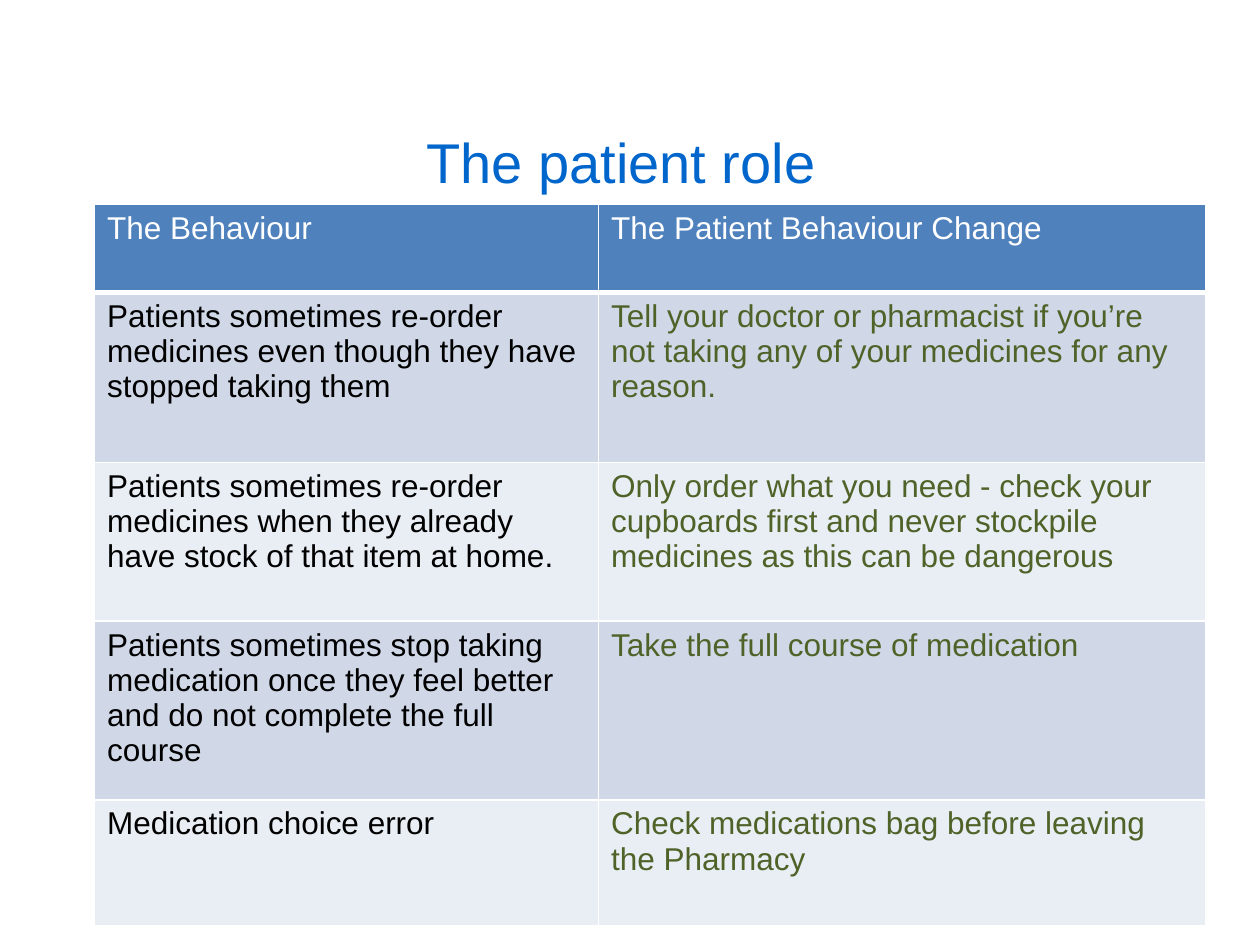
"""Build the patient role slide with its behaviour table."""
import lxml.etree
import pptx
import pptx.dml.color
import pptx.enum.text
import pptx.oxml.ns
import pptx.util
from pptx.util import Inches

TITLE = "The patient role"
ROWS = [
    ("The Behaviour", "The Patient Behaviour Change"),
    ("Patients sometimes re-order medicines even though they have stopped taking them",
     "Tell your doctor or pharmacist if you’re not taking any of your medicines for any reason."),
    ("Patients sometimes re-order medicines when they already have stock of that item at home.",
     "Only order what you need - check your cupboards first and never stockpile medicines as this can be dangerous"),
    ("Patients sometimes stop taking medication once they feel better and do not complete the full course",
     "Take the full course of medication"),
    ("Medication choice error", "Check medications bag before leaving the Pharmacy"),
]
COLUMN_WIDTHS = [4, 4.82]
ROW_HEIGHTS = [0.7, 1.35, 1.26, 1.42, 1]
COLORS = {
    "title": "0066CC", "header": "4F81BD", "odd": "D0D8E8", "even": "E9EDF4",
    "white": "FFFFFF", "behaviour": "000000", "change": "4F6228",
}


def rgb(name):
    return pptx.dml.color.RGBColor.from_string(COLORS[name])


def write_text(text_frame, text, size=18, color="behaviour", align=pptx.enum.text.PP_ALIGN.LEFT):
    paragraph = text_frame.paragraphs[0]
    paragraph.alignment = align
    run = paragraph.add_run()
    run.text = text
    run.font.name = "Arial"
    run.font.size = pptx.util.Pt(size)
    run.font.bold = False
    run.font.color.rgb = rgb(color)


def set_borders(cell, bottom_width):
    properties = cell._tc.get_or_add_tcPr()
    widths = {"lnL": 1, "lnR": 1, "lnT": 1, "lnB": bottom_width}
    for position, (side, width) in enumerate(widths.items()):
        line = lxml.etree.Element(pptx.oxml.ns.qn(f"a:{side}"), w=str(pptx.util.Pt(width)))
        fill = lxml.etree.SubElement(line, pptx.oxml.ns.qn("a:solidFill"))
        lxml.etree.SubElement(fill, pptx.oxml.ns.qn("a:srgbClr"), val=COLORS["white"])
        properties.insert(position, line)


def add_title(slide):
    title = slide.shapes.title
    title.left, title.top, title.width, title.height = map(Inches, (0.43, 0.84, 9, 0.87))
    title.text_frame.vertical_anchor = pptx.enum.text.MSO_ANCHOR.MIDDLE
    write_text(title.text_frame, TITLE, size=32, color="title",
               align=pptx.enum.text.PP_ALIGN.CENTER)


def add_behaviour_table(slide):
    table = slide.shapes.add_table(
        len(ROWS), len(COLUMN_WIDTHS), Inches(0.75), Inches(1.62),
        Inches(sum(COLUMN_WIDTHS)), Inches(sum(ROW_HEIGHTS))).table
    for column, width in zip(table.columns, COLUMN_WIDTHS):
        column.width = Inches(width)
    for index, (row, height, texts) in enumerate(zip(table.rows, ROW_HEIGHTS, ROWS)):
        row.height = Inches(height)
        is_header = index == 0
        fill = "header" if is_header else ("odd" if index % 2 else "even")
        for cell, text, color in zip(row.cells, texts, ("behaviour", "change")):
            cell.fill.solid()
            cell.fill.fore_color.rgb = rgb(fill)
            set_borders(cell, 3 if is_header else 1)
            write_text(cell.text_frame, text, color="white" if is_header else color)


def main():
    presentation = pptx.Presentation()
    presentation.slide_width, presentation.slide_height = Inches(10), Inches(7.5)
    slide = presentation.slides.add_slide(presentation.slide_layouts[5])
    add_title(slide)
    add_behaviour_table(slide)
    presentation.save("out.pptx")


if __name__ == "__main__":
    main()
